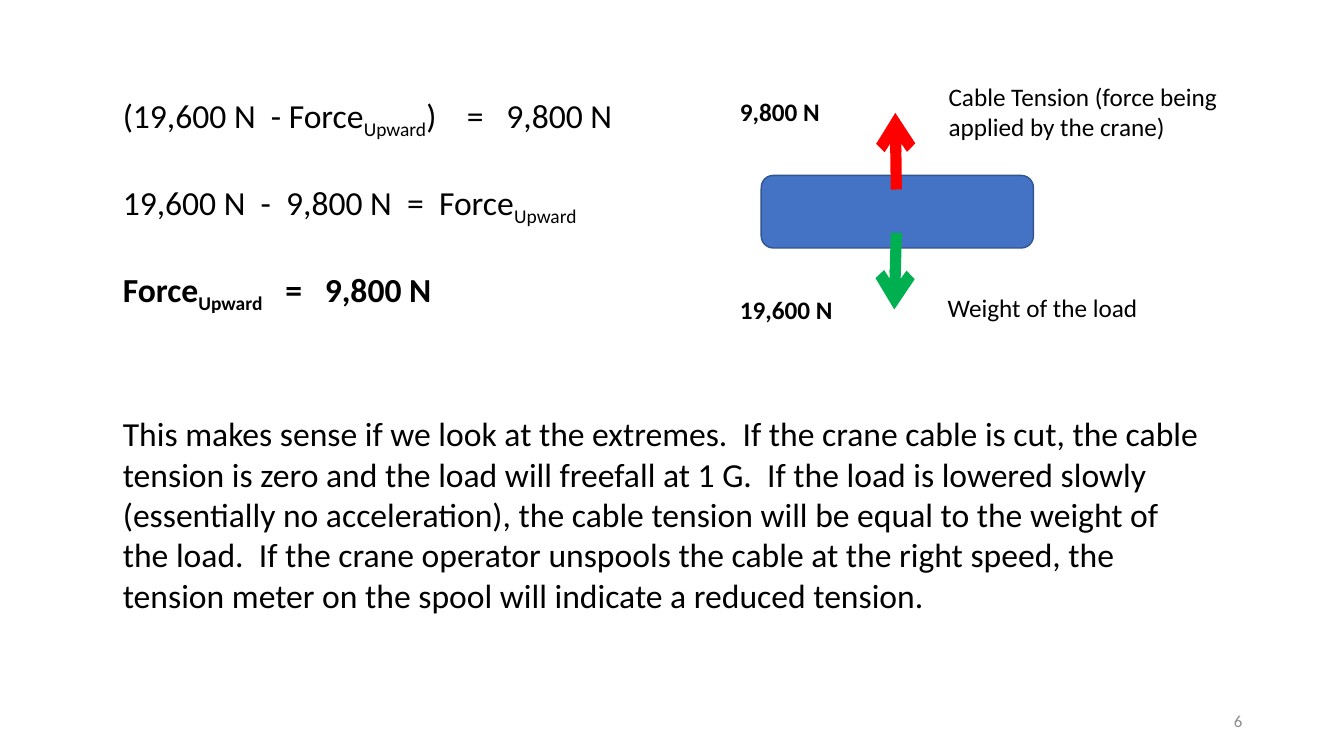
from dataclasses import dataclass

from lxml import etree
from pptx import Presentation
from pptx.dml.color import RGBColor
from pptx.enum import shapes, text
from pptx.oxml import ns
from pptx.util import Inches, Pt


@dataclass(frozen=True)
class Theme:
    font: str = "Calibri"
    ink: str = "000000"
    muted: str = "8C8C8C"
    load: str = "4472C4"
    load_edge: str = "325491"
    tension: str = "FF0000"
    weight: str = "00B050"
    body: int = 24
    label: int = 18
    footer: int = 12


def add_span(para, words, *, font, size, color, bold=False, subscript=False):
    span = para.add_run()
    span.text = words
    span.font.name = font
    span.font.size = Pt(size)
    span.font.bold = bold
    span.font.color.rgb = RGBColor.from_string(color)
    if subscript:
        span.font._element.set("baseline", "-25000")


class ForcePage:
    """Draws styled elements on one slide."""

    def __init__(self, page, theme):
        self.page = page
        self.theme = theme

    def text_box(self, place, paragraphs, *, size, color=None, bold=False, gap=0,
                 align=text.PP_ALIGN.LEFT, anchor=text.MSO_ANCHOR.TOP):
        box = self.page.shapes.add_textbox(*map(Inches, place))
        frame = box.text_frame
        frame.word_wrap = True
        frame.vertical_anchor = anchor
        for index, spans in enumerate(paragraphs):
            para = frame.paragraphs[0] if index == 0 else frame.add_paragraph()
            para.alignment = align
            para.space_before = Pt(gap if index else 0)
            for words, options in spans:
                style = {"font": self.theme.font, "size": size,
                         "color": color or self.theme.ink, "bold": bold}
                add_span(para, words, **{**style, **options})

    def label(self, place, words, **options):
        self.text_box(place, [[(words, {})]], **{"size": self.theme.label, **options})

    def load(self, place):
        box = self.page.shapes.add_shape(
            shapes.MSO_SHAPE.ROUNDED_RECTANGLE, *map(Inches, place))
        box.shadow.inherit = False
        box.fill.solid()
        box.fill.fore_color.rgb = RGBColor.from_string(self.theme.load)
        box.line.color.rgb = RGBColor.from_string(self.theme.load_edge)
        box.line.width = Pt(1)

    def arrow(self, start, end, color):
        arrow = self.page.shapes.add_connector(
            shapes.MSO_CONNECTOR.STRAIGHT, *map(Inches, start + end))
        arrow.line.color.rgb = RGBColor.from_string(color)
        arrow.line.width = Pt(8)
        etree.SubElement(arrow.line._get_or_add_ln(), ns.qn("a:tailEnd"), type="arrow")
        etree.SubElement(arrow._element.spPr, ns.qn("a:effectLst"))


def main():
    deck = Presentation()
    deck.slide_width, deck.slide_height = Inches(13.33), Inches(7.5)
    theme = Theme()
    page = ForcePage(deck.slides.add_slide(deck.slide_layouts[6]), theme)

    sub, strong = {"subscript": True}, {"bold": True}
    equations = [
        [("(19,600 N  - Force", {}), ("Upward", sub), (")    =   9,800 N", {})],
        [("19,600 N  -  9,800 N  =  Force", {}), ("Upward", sub)],
        [("Force", strong), ("Upward", {**sub, **strong}), ("   =   9,800 N", strong)],
    ]
    page.text_box((1.12, 0.89, 5.3, 2.52), equations, size=theme.body, gap=29.3)

    page.load((7.55, 1.74, 2.7, 0.72))
    page.arrow((8.89, 1.88), (8.88, 1.12), theme.tension)
    page.arrow((8.89, 2.31), (8.87, 3.07), theme.weight)
    page.label((9.31, 0.76, 2.9, 0.71), "Cable Tension (force being applied by the crane)")
    page.label((9.3, 2.85, 2.9, 0.4), "Weight of the load")
    for top, force in ((2.87, "19,600 N"), (0.91, "9,800 N")):
        page.label((7.24, top, 1.43, 0.4), force, bold=True)

    page.label(
        (1.12, 4.05, 10.91, 2.12),
        "This makes sense if we look at the extremes.  If the crane cable is cut, "
        "the cable tension is zero and the load will freefall at 1 G.  If the load is "
        "lowered slowly (essentially no acceleration), the cable tension will be equal "
        "to the weight of the load.  If the crane operator unspools the cable at the "
        "right speed, the tension meter on the spool will indicate a reduced tension.",
        size=theme.body)
    page.label((9.42, 6.95, 3, 0.4), "6", size=theme.footer, color=theme.muted,
               align=text.PP_ALIGN.RIGHT, anchor=text.MSO_ANCHOR.MIDDLE)
    deck.save("out.pptx")


if __name__ == "__main__":
    main()
